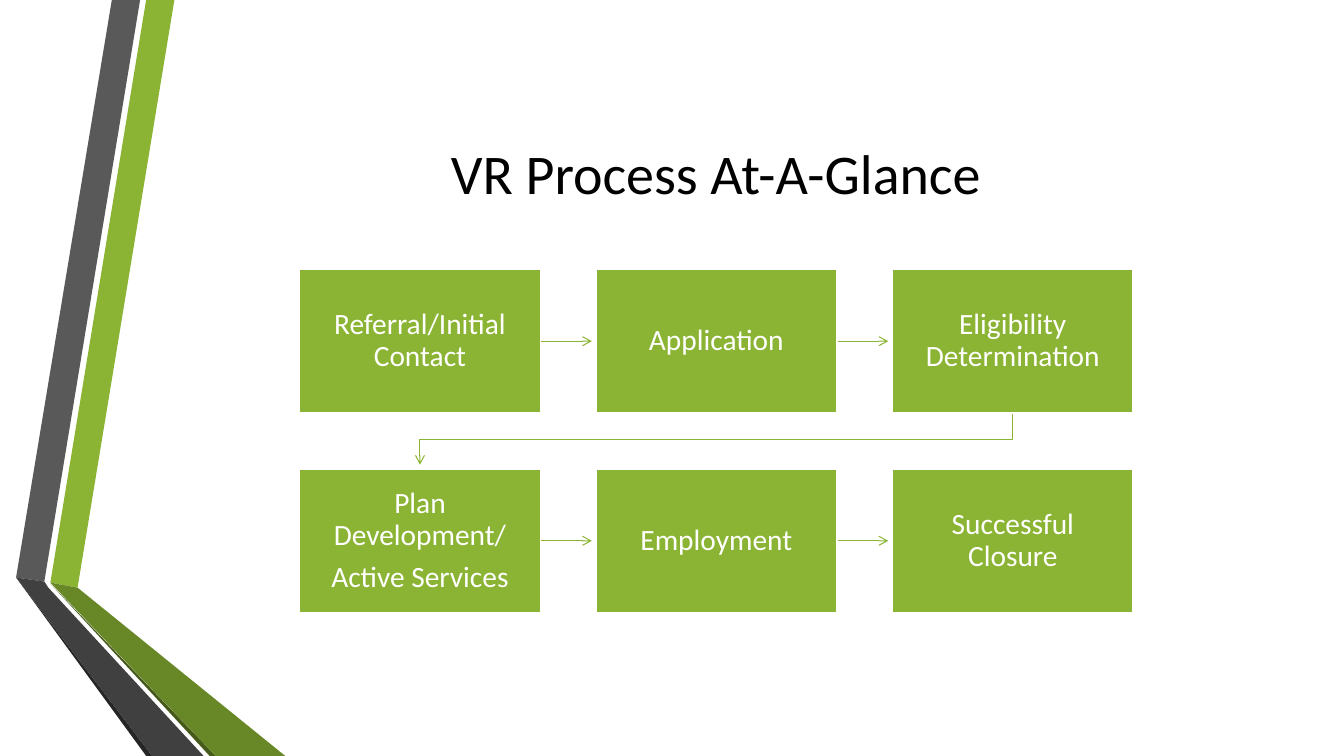
from dataclasses import dataclass

from lxml import etree
from pptx import Presentation
from pptx.dml.color import RGBColor
from pptx.enum.shapes import MSO_CONNECTOR, MSO_SHAPE
from pptx.enum.text import MSO_ANCHOR, PP_ALIGN
from pptx.oxml.ns import qn
from pptx.util import Inches, Pt

STRAIGHT = MSO_CONNECTOR.STRAIGHT
RECT = MSO_SHAPE.RECTANGLE
MIDDLE = MSO_ANCHOR.MIDDLE
CENTER = PP_ALIGN.CENTER
TITLE_ONLY = 5


@dataclass(frozen=True)
class Theme:
    font: str = "Calibri"
    title_size: float = 40
    box_size: float = 21
    line_width: float = 0.75
    border_width: float = 1.25
    green: str = "8BB434"
    green_dark: str = "688727"
    green_deep: str = "465A1A"
    grey: str = "595959"
    grey_dark: str = "404040"
    grey_deep: str = "262626"
    white: str = "FFFFFF"
    black: str = "000000"


@dataclass(frozen=True)
class Grid:
    left: float = 2.97
    top: float = 2.67
    col_step: float = 2.94
    row_step: float = 1.98
    width: float = 2.39
    height: float = 1.43
    columns: int = 3

    def cell(self, index):
        row, col = divmod(index, self.columns)
        return self.left + col * self.col_step, self.top + row * self.row_step


THEME = Theme()
GRID = Grid()
ARROW_GAP = 0.04

STEPS = [
    "Referral/Initial Contact",
    "Application",
    "Eligibility Determination",
    "Plan Development/\nActive Services",
    "Employment",
    "Successful Closure",
]

RIBBONS = [
    (THEME.green, [(0.5, 5.78), (0.77, 5.83), (1.73, 0), (1.45, 0)]),
    (THEME.grey, [(1.39, 0), (1.11, 0), (0.16, 5.73), (0.44, 5.77)]),
    (THEME.grey_deep, [(0.16, 5.73), (1.45, 7.5), (1.51, 7.5)]),
    (THEME.green_deep, [(0.5, 5.79), (2.08, 7.5), (2.14, 7.5)]),
    (THEME.green_dark, [(0.5, 5.78), (2.14, 7.5), (2.83, 7.5), (0.77, 5.83)]),
    (THEME.grey_dark, [(2.02, 7.5), (0.48, 5.83), (0.44, 5.77), (0.16, 5.73), (1.51, 7.5)]),
]


def rgb(value):
    return RGBColor.from_string(value)


def write_text(tf, text, *, size, color, spacing=None, after=0, inset=0.1):
    tf.word_wrap = True
    tf.vertical_anchor = MIDDLE
    tf.margin_left = tf.margin_right = tf.margin_top = tf.margin_bottom = Inches(inset)
    for i, line in enumerate(text.split("\n")):
        p = tf.paragraphs[0] if i == 0 else tf.add_paragraph()
        p.alignment = CENTER
        p.line_spacing = spacing
        p.space_after = Pt(after)
        r = p.add_run()
        r.text = line
        r.font.name = THEME.font
        r.font.size = Pt(size)
        r.font.color.rgb = rgb(color)


def add_outline(s, points, close):
    (x, y), *rest = [(Inches(px), Inches(py)) for px, py in points]
    builder = s.shapes.build_freeform(x, y, scale=1.0)
    builder.add_line_segments(rest, close=close)
    sp = builder.convert_to_shape()
    sp.shadow.inherit = False
    return sp


def add_ribbon(s, color, points):
    sp = add_outline(s, points, True)
    sp.fill.solid()
    sp.fill.fore_color.rgb = rgb(color)
    sp.line.fill.background()


def style_arrow(sp):
    sp.line.color.rgb = rgb(THEME.green)
    sp.line.width = Pt(THEME.line_width)
    etree.SubElement(sp.line._get_or_add_ln(), qn("a:tailEnd"), type="arrow")


def add_arrow(s, index):
    x, y = GRID.cell(index)
    middle = Inches(y + GRID.height / 2)
    sp = s.shapes.add_connector(
        STRAIGHT, Inches(x + GRID.width), middle, Inches(x + GRID.col_step - ARROW_GAP), middle
    )
    style_arrow(sp)
    etree.SubElement(sp._element.spPr, qn("a:effectLst"))


def add_return_arrow(s, index):
    x1, y1 = GRID.cell(index)
    x2, y2 = GRID.cell(index + 1)
    x1, x2 = x1 + GRID.width / 2, x2 + GRID.width / 2
    y1 += GRID.height
    turn = (y1 + y2) / 2 - ARROW_GAP / 4
    sp = add_outline(s, [(x1, y1), (x1, turn), (x2, turn), (x2, y2 - ARROW_GAP)], False)
    sp.fill.background()
    style_arrow(sp)


def add_step(s, index, text):
    x, y = GRID.cell(index)
    sp = s.shapes.add_shape(RECT, Inches(x), Inches(y), Inches(GRID.width), Inches(GRID.height))
    sp.shadow.inherit = False
    sp.fill.solid()
    sp.fill.fore_color.rgb = rgb(THEME.green)
    sp.line.color.rgb = rgb(THEME.white)
    sp.line.width = Pt(THEME.border_width)
    write_text(sp.text_frame, text, size=THEME.box_size, color=THEME.white,
               spacing=0.9, after=0.35 * THEME.box_size, inset=0.16)


def add_title(s, text):
    sp = s.shapes.title
    sp.left, sp.top, sp.width, sp.height = map(Inches, (1.62, 0.75, 10.96, 1.92))
    write_text(sp.text_frame, text, size=THEME.title_size, color=THEME.black)


def main():
    prs = Presentation()
    prs.slide_width, prs.slide_height = Inches(13.33), Inches(7.5)
    s = prs.slides.add_slide(prs.slide_layouts[TITLE_ONLY])
    for color, points in RIBBONS:
        add_ribbon(s, color, points)
    add_title(s, "VR Process At-A-Glance")
    for index in range(len(STEPS) - 1):
        row_ends = (index + 1) % GRID.columns == 0
        (add_return_arrow if row_ends else add_arrow)(s, index)
    for index, text in enumerate(STEPS):
        add_step(s, index, text)
    prs.save("out.pptx")


if __name__ == "__main__":
    main()
